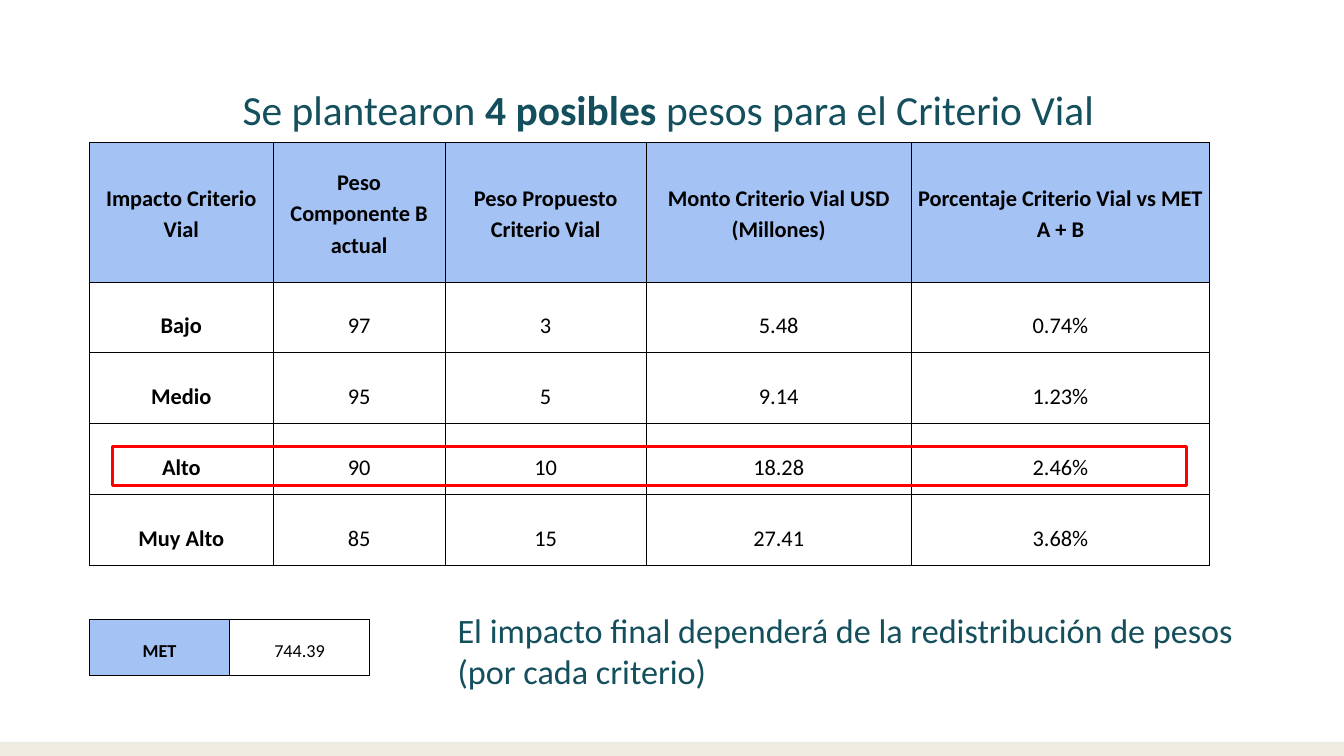
from dataclasses import dataclass

from lxml.etree import SubElement
from pptx import Presentation
from pptx.dml.color import RGBColor
from pptx.enum.shapes import MSO_SHAPE
from pptx.enum.text import MSO_ANCHOR, PP_ALIGN
from pptx.oxml.ns import qn
from pptx.util import Pt


@dataclass(frozen=True)
class Theme:
    font: str = "Calibri"
    teal: str = "134F5C"
    black: str = "000000"
    header: str = "A4C2F4"
    footer: str = "EEECE1"
    highlight: str = "FF0000"
    title_size: float = 29.6
    note_size: float = 24.4
    table_size: float = 16
    total_size: float = 13
    border: float = 0.75
    inset: float = 9.36
    cell_inset: float = 2.9


THEME = Theme()
SLIDE_WIDTH, SLIDE_HEIGHT = 960, 540
TABLE_LEFT = 64

WEIGHTS = [
    ["Impacto Criterio Vial", "Peso Componente B actual", "Peso Propuesto Criterio Vial",
     "Monto Criterio Vial USD (Millones)", "Porcentaje Criterio Vial vs MET A + B"],
    ["Bajo", "97", "3", "5.48", "0.74%"],
    ["Medio", "95", "5", "9.14", "1.23%"],
    ["Alto", "90", "10", "18.28", "2.46%"],
    ["Muy Alto", "85", "15", "27.41", "3.68%"],
]


def style_font(font, size, color, bold=False):
    font.name, font.size, font.bold = THEME.font, Pt(size), bold
    font.color.rgb = RGBColor.from_string(color)


def add_text(slide, position, spans, size):
    """Add a text box from (text, bold) spans."""
    box = slide.shapes.add_textbox(*map(Pt, position))
    frame = box.text_frame
    frame.word_wrap = True
    frame.margin_left = frame.margin_right = Pt(THEME.inset)
    frame.margin_top = frame.margin_bottom = Pt(THEME.inset)
    for text, bold in spans:
        span = frame.paragraphs[0].add_run()
        span.text = text
        style_font(span.font, size, THEME.teal, bold)


def add_rectangle(slide, position, fill=None, line=None):
    shape = slide.shapes.add_shape(MSO_SHAPE.RECTANGLE, *map(Pt, position))
    shape.shadow.inherit = False
    if fill:
        shape.fill.solid()
        shape.fill.fore_color.rgb = RGBColor.from_string(fill)
    else:
        shape.fill.background()
    if line:
        shape.line.color.rgb = RGBColor.from_string(line)
        shape.line.width = Pt(2.25)
    else:
        shape.line.fill.background()


def add_borders(cell):
    """Draw all four borders; they must precede the fill in the cell XML."""
    properties = cell._tc.get_or_add_tcPr()
    for side in ("a:lnL", "a:lnR", "a:lnT", "a:lnB"):
        line = SubElement(properties, qn(side), w=str(Pt(THEME.border)))
        fill = SubElement(line, qn("a:solidFill"))
        SubElement(fill, qn("a:srgbClr"), val=THEME.black)


def style_cell(cell, text, size, bold, fill, anchor):
    cell.text = text
    cell.vertical_anchor = anchor
    cell.margin_left = cell.margin_right = Pt(THEME.cell_inset)
    cell.margin_top = cell.margin_bottom = Pt(THEME.inset)
    add_borders(cell)
    if fill:
        cell.fill.solid()
        cell.fill.fore_color.rgb = RGBColor.from_string(fill)
    else:
        cell.fill.background()
    para = cell.text_frame.paragraphs[0]
    para.alignment = PP_ALIGN.CENTER
    para.line_spacing = 1.15
    style_font(para.runs[0].font, size, THEME.black, bold)


def add_grid(slide, top, widths, heights, rows, size, has_header):
    """Add a table with a bold first column and a shaded header row or label."""
    frame = slide.shapes.add_table(len(rows), len(widths), Pt(TABLE_LEFT), Pt(top),
                                   Pt(sum(widths)), Pt(sum(heights)))
    table = frame.table
    table.first_row = table.horz_banding = False
    for column, width in zip(table.columns, widths):
        column.width = Pt(width)
    for row, height in zip(table.rows, heights):
        row.height = Pt(height)
    for r, values in enumerate(rows):
        for c, value in enumerate(values):
            in_header = has_header and r == 0
            shaded = in_header or (not has_header and c == 0)
            style_cell(table.cell(r, c), value, size, in_header or c == 0,
                       THEME.header if shaded else None,
                       MSO_ANCHOR.MIDDLE if in_header else MSO_ANCHOR.BOTTOM)


def main():
    deck = Presentation()
    deck.slide_width, deck.slide_height = Pt(SLIDE_WIDTH), Pt(SLIDE_HEIGHT)
    slide = deck.slides.add_slide(deck.slide_layouts[6])

    add_rectangle(slide, (0, 530, SLIDE_WIDTH, 10), fill=THEME.footer)
    add_text(slide, (164, 51, 897, 101.5),
             [("Se plantearon ", False), ("4 posibles", True),
              (" pesos para el Criterio Vial", False)], THEME.title_size)
    add_grid(slide, 442.5, [100, 100], [40], [["MET", "744.39"]], THEME.total_size, False)
    add_grid(slide, 101.5, [131, 123, 143.5, 189.5, 213], [100] + [50.6] * 4,
             WEIGHTS, THEME.table_size, True)
    add_text(slide, (317.5, 426, 574, 83),
             [("El impacto final dependerá de la redistribución de pesos (por cada criterio)",
               False)], THEME.note_size)
    add_rectangle(slide, (80.5, 319, 767, 28), line=THEME.highlight)
    deck.save("out.pptx")


if __name__ == "__main__":
    main()
